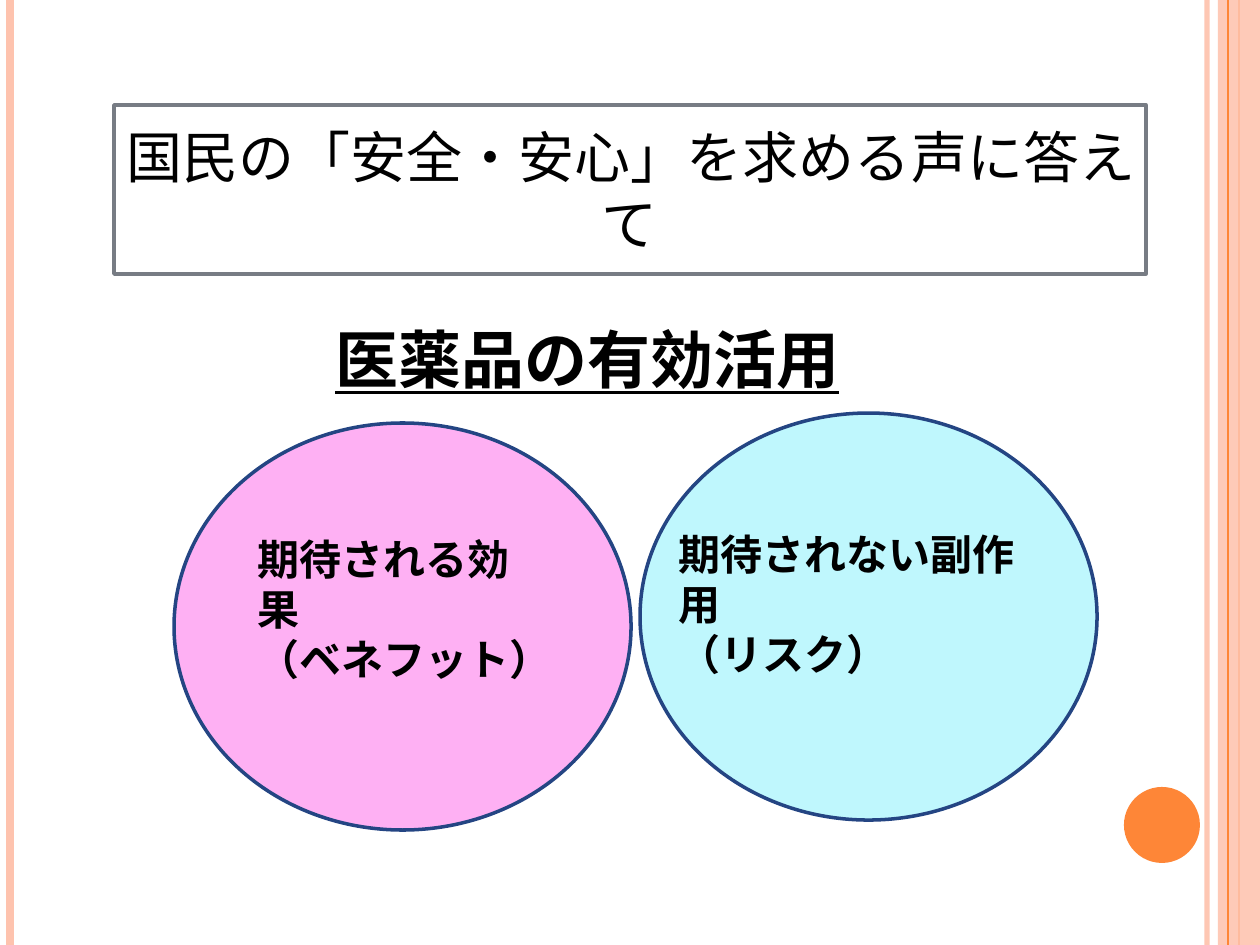
from lxml.etree import SubElement
from pptx import Presentation
from pptx.dml.color import RGBColor
from pptx.enum.shapes import MSO_CONNECTOR as Connector, MSO_SHAPE as Shape
from pptx.enum.text import MSO_ANCHOR as Anchor, PP_ALIGN as Align
from pptx.oxml.ns import qn
from pptx.util import Emu, Pt

WIDTH, HEIGHT = 1260, 945
EMU_PER_PX = 914400 / 126

PEACH = RGBColor(0xFE, 0xC3, 0xAE)
ORANGE = RGBColor(0xFE, 0x86, 0x37)
CYAN = RGBColor(0xBF, 0xF7, 0xFD)
PINK = RGBColor(0xFE, 0xB0, 0xF3)
NAVY = RGBColor(0x24, 0x45, 0x83)
GRAY = RGBColor(0x77, 0x7C, 0x84)
WHITE = RGBColor(0xFF, 0xFF, 0xFF)
BLACK = RGBColor(0x00, 0x00, 0x00)

TITLE_FONT = "Cambria"
BODY_FONT = "Noto Sans CJK JP"


def px(length):
    return Emu(round(length * EMU_PER_PX))


def set_alpha(color_parent, percent):
    color = next(color_parent.iter(qn("a:srgbClr")))
    SubElement(color, qn("a:alpha")).set("val", str(percent * 1000))


def add_filled(slide, kind, box, fill, line=None):
    shape = slide.shapes.add_shape(kind, *map(px, box))
    shape.shadow.inherit = False
    shape.fill.solid()
    shape.fill.fore_color.rgb = fill
    if line is None:
        shape.line.fill.background()
    else:
        shape.line.color.rgb = line
        shape.line.width = Pt(2)
    return shape


def add_stripe(slide, x, color, width, alpha=100):
    stripe = slide.shapes.add_connector(
        Connector.STRAIGHT, px(x), px(0), px(x), px(HEIGHT))
    stripe.line.color.rgb = color
    stripe.line.width = Pt(width)
    properties = stripe._element.spPr
    if alpha < 100:
        set_alpha(properties, alpha)
    SubElement(properties, qn("a:effectLst"))


def write_lines(frame, lines, font_name, size, bold=False, underline=False,
                align=Align.LEFT):
    frame.word_wrap = True
    for index, line in enumerate(lines):
        paragraph = frame.add_paragraph() if index else frame.paragraphs[0]
        paragraph.text = line
        paragraph.alignment = align
        font = paragraph.font
        font.name, font.size = font_name, Pt(size)
        font.bold, font.underline = bold, underline
        font.color.rgb = BLACK


def add_text(slide, box, lines, size, underline=False):
    frame = slide.shapes.add_textbox(*map(px, box)).text_frame
    write_lines(frame, lines, BODY_FONT, size, bold=True, underline=underline)


def add_decoration(slide):
    # Edge stripes, right-hand band and corner dot
    add_stripe(slide, 1207, PEACH, 3, alpha=93)
    add_stripe(slide, 10, PEACH, 4.5)
    add_stripe(slide, 1239, ORANGE, 1.5)
    band = add_filled(slide, Shape.RECTANGLE, (1218, 0, 42, HEIGHT), PEACH)
    set_alpha(band._element.spPr, 87)
    add_stripe(slide, 1228, ORANGE, 0.75)
    add_filled(slide, Shape.OVAL, (1124, 787, 76, 76), ORANGE)


def add_title(slide, box):
    shape = add_filled(slide, Shape.RECTANGLE, box, WHITE, GRAY)
    shape.text_frame.vertical_anchor = Anchor.MIDDLE
    write_lines(shape.text_frame, ["国民の「安全・安心」を求める声に答えて"],
                TITLE_FONT, 32, align=Align.CENTER)


def add_circle(slide, box, fill, lines, text_offset, text_width):
    left, top, _, _ = box
    add_filled(slide, Shape.OVAL, box, fill, NAVY)
    dx, dy = text_offset
    add_text(slide, (left + dx, top + dy, text_width, 115), lines, 24)


def main():
    presentation = Presentation()
    presentation.slide_width, presentation.slide_height = px(WIDTH), px(HEIGHT)
    slide = presentation.slides.add_slide(presentation.slide_layouts[6])

    add_decoration(slide)
    add_title(slide, (114, 105, 1032, 169))
    add_text(slide, (323, 314, 560, 80), ["医薬品の有効活用"], 36, underline=True)

    # Benefit and risk circles
    add_circle(slide, (640, 413, 457, 407), CYAN,
               ["期待されない副作用　", "（リスク）"], (26, 109), 421)
    add_circle(slide, (174, 423, 457, 407), PINK,
               ["期待される効果　", "（ベネフット）"], (71, 104), 336)

    presentation.save("out.pptx")


if __name__ == "__main__":
    main()
